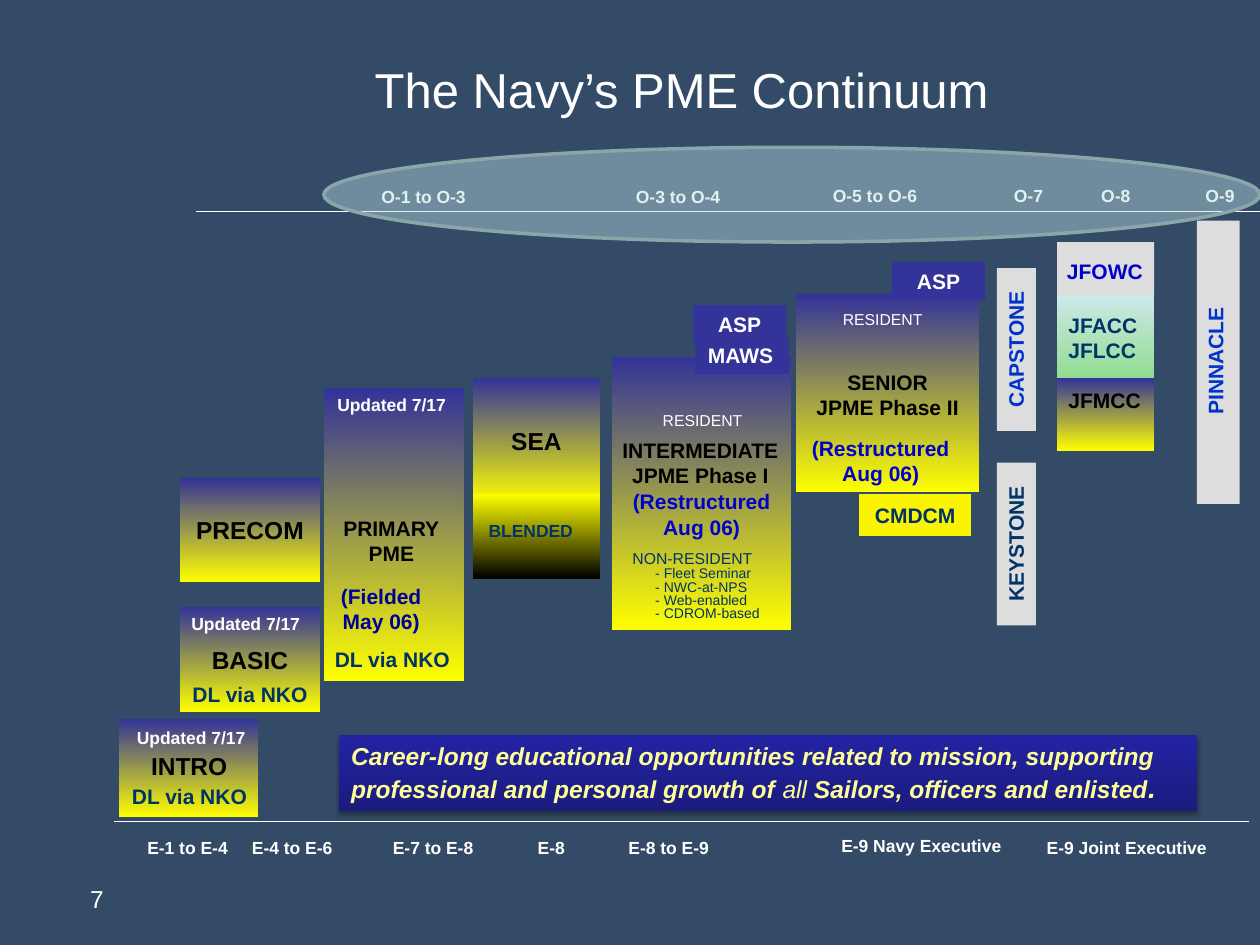
from lxml import etree
from pptx import Presentation
from pptx.dml.color import RGBColor
from pptx.enum.shapes import MSO_CONNECTOR, MSO_SHAPE
from pptx.enum.text import MSO_ANCHOR, PP_ALIGN
from pptx.oxml import parse_xml
from pptx.oxml.ns import nsdecls, qn
from pptx.util import Cm, Pt

RECT, OVAL, BUTTON = MSO_SHAPE.RECTANGLE, MSO_SHAPE.OVAL, MSO_SHAPE.ACTION_BUTTON_CUSTOM
TOP, MIDDLE = MSO_ANCHOR.TOP, MSO_ANCHOR.MIDDLE
LEFT, CENTER, RIGHT = PP_ALIGN.LEFT, PP_ALIGN.CENTER, PP_ALIGN.RIGHT

WHITE = RGBColor(0xFF, 0xFF, 0xFF)
BLACK = RGBColor(0, 0, 0)
SLATE = RGBColor(0x33, 0x4B, 0x67)
INDIGO = RGBColor(0x33, 0x33, 0x99)
YELLOW = RGBColor(0xFF, 0xFF, 0)
GOLD = RGBColor(0xFA, 0xF4, 0)
TEAL = RGBColor(0, 0x33, 0x66)
BLUE = RGBColor(0, 0, 0xCC)
NAVY = RGBColor(0, 0, 0x99)
ROYAL = RGBColor(0, 0x33, 0xCC)
GREY = RGBColor(0xDD, 0xDD, 0xDD)
ICE = RGBColor(0xCF, 0xE9, 0xEB)
GREEN = RGBColor(0x92, 0xDC, 0x92)
BANNER_LOW = RGBColor(0x1B, 0x1B, 0x7E)
BANNER_HIGH = RGBColor(0x23, 0x23, 0xA3)
CREAM = RGBColor(0xFF, 0xFF, 0x99)
HALO = RGBColor(0xBB, 0xE0, 0xE3)
HALO_LINE = RGBColor(0x8A, 0xA6, 0xA8)

RANK = {"size": 10, "bold": True, "color": WHITE}
HEAD = {"size": 14, "bold": True, "color": BLACK}
NAME = {"size": 12, "bold": True, "color": BLACK}
MODE = {"size": 9, "color": WHITE}
FADE = (INDIGO, YELLOW)


def cm(*inches):
    return [Cm(round(2.54 * v, 2)) for v in inches]


def add_run(p, text, fmt):
    r = p.add_run()
    r.text = text
    r.font.name = "Arial"
    for key, value in fmt.items():
        if key == "color":
            r.font.color.rgb = value
        else:
            setattr(r.font, key, Pt(value) if key == "size" else value)


def write(sp, lines, fmt, align=CENTER, anchor=TOP, spacing=None):
    """Fill a shape; each line is a string or a list of (text, extra format)."""
    tf = sp.text_frame
    tf.word_wrap = True
    tf.vertical_anchor = anchor
    if align == LEFT:
        tf.margin_right = 0
    for i, line in enumerate(lines):
        p = tf.paragraphs[0] if i == 0 else tf.add_paragraph()
        p.alignment = align
        if spacing:
            p.line_spacing = spacing
        for text, extra in [(line, {})] if isinstance(line, str) else line:
            add_run(p, text, {**fmt, **extra})
    return tf


def add_text(s, box, lines, fmt, align=LEFT, **options):
    sp = s.shapes.add_textbox(*cm(*box))
    write(sp, lines, fmt, align, **options)
    return sp


def add_block(s, box, fill, kind=RECT, angle=270):
    """Borderless shape; a pair of colours makes a gradient."""
    sp = s.shapes.add_shape(kind, *cm(*box))
    sp.shadow.inherit = False
    sp.line.fill.background()
    if isinstance(fill, RGBColor):
        sp.fill.solid()
        sp.fill.fore_color.rgb = fill
    else:
        sp.fill.gradient()
        sp.fill.gradient_angle = angle
        for stop, color in zip(sp.fill.gradient_stops, fill):
            stop.color.rgb = color
    return sp


def add_rule(s, x1, x2, y):
    ln = s.shapes.add_connector(MSO_CONNECTOR.STRAIGHT, *cm(x1, y, x2, y))
    ln.line.color.rgb = WHITE
    ln.line.width = Pt(0.75)
    etree.SubElement(ln._element.spPr, qn("a:effectLst"))


def add_banner(s):
    sp = add_block(s, (2.69, 5.83, 6.81, 0.61), (BANNER_LOW, BANNER_HIGH), angle=90)
    effects = sp._element.spPr.find(qn("a:effectLst"))
    effects.append(parse_xml(
        f'<a:outerShdw {nsdecls("a")} blurRad="39370" dist="22860" dir="5400000" rotWithShape="0">'
        '<a:srgbClr val="000000"><a:alpha val="35000"/></a:srgbClr></a:outerShdw>'))
    write(sp, ["Career-long educational opportunities related to mission, supporting",
               [("professional and personal growth of ", {}), ("all", {"bold": False}),
                (" Sailors, officers and enlisted", {}), (".", {"size": 16})]],
          {"size": 14, "bold": True, "italic": True, "color": CREAM}, LEFT)


def add_halo(s):
    sp = add_block(s, (2.57, 1.17, 7.43, 0.75), HALO, OVAL)
    color = sp._element.spPr.find(qn("a:solidFill"))[0]
    etree.SubElement(color, qn("a:alpha"), val="44000")
    sp.line.color.rgb = HALO_LINE
    sp.line.width = Pt(2)


def main():
    prs = Presentation()
    prs.slide_width, prs.slide_height = cm(10, 7.5)
    s = prs.slides.add_slide(prs.slide_layouts[6])
    s.background.fill.solid()
    s.background.fill.fore_color.rgb = SLATE

    # Title and slide number
    add_text(s, (1.45, 0.42, 7.92, 0.57), ["The Navy’s PME Continuum"],
             {"size": 28, "color": WHITE}, CENTER)
    tf = add_text(s, (0.17, 6.92, 0.75, 0.52), ["7"], {"size": 14, "color": WHITE},
                  RIGHT).text_frame
    tf.margin_top = tf.margin_bottom = Cm(0.25)

    # Officer and enlisted rank scales
    add_rule(s, 1.56, 10, 1.68)
    add_rule(s, 0.9, 9.91, 6.52)
    for x, y, w, text in (
            (2.93, 1.43, 0.9, "O-1 to O-3"), (4.95, 1.43, 0.9, "O-3 to O-4"),
            (6.51, 1.42, 0.9, "O-5 to O-6"), (7.95, 1.42, 0.43, "O-7"),
            (8.64, 1.42, 0.43, "O-8"), (9.47, 1.42, 0.44, "O-9"),
            (1.07, 6.59, 0.86, "E-1 to E-4"), (1.9, 6.59, 0.86, "E-4 to E-6"),
            (3.02, 6.59, 0.86, "E-7 to E-8"), (4.17, 6.59, 0.43, "E-8"),
            (4.89, 6.59, 0.86, "E-8 to E-9"), (6.58, 6.58, 1.5, "E-9 Navy Executive"),
            (8.21, 6.59, 1.5, "E-9 Joint Executive")):
        add_text(s, (x, y, w, 0.27), [text], RANK)

    # Course blocks
    for box, fill, title in (
            ((0.94, 5.71, 1.11, 0.78), FADE, None), ((1.43, 4.82, 1.11, 0.83), FADE, "BASIC"),
            ((1.43, 3.79, 1.11, 0.83), FADE, "PRECOM"), ((2.57, 3.08, 1.11, 2.33), FADE, None),
            ((3.75, 3, 1.01, 1), FADE, "SEA"), ((3.75, 3.92, 1.01, 0.67), (YELLOW, BLACK), None),
            ((4.86, 2.83, 1.42, 2.17), FADE, None), ((6.32, 2.33, 1.45, 1.58), FADE, None),
            ((8.39, 3, 0.77, 0.58), FADE, None), ((8.39, 2.33, 0.77, 0.67), (ICE, GREEN), None),
            ((8.39, 1.92, 0.77, 0.42), GREY, None), ((9.5, 1.75, 0.34, 2.25), GREY, None)):
        sp = add_block(s, box, fill)
        if title:
            write(sp, [title], HEAD, anchor=MIDDLE)
    add_text(s, (1.03, 5.83, 0.94, 0.5), ["INTRO"], HEAD, CENTER, anchor=MIDDLE)

    # Course names
    restructured = ["(Restructured", "Aug 06)"]
    for box, lines, color in (
            ((2.57, 4.04, 1.07, 0.5), ["PRIMARY", "PME"], BLACK),
            ((2.57, 4.58, 0.91, 0.5), ["(Fielded", "May 06)"], NAVY),
            ((4.82, 3.42, 1.48, 0.5), ["INTERMEDIATE", "JPME Phase I"], BLACK),
            ((4.91, 3.83, 1.32, 0.5), restructured, BLUE),
            ((6.33, 2.88, 1.43, 0.51), ["SENIOR", "JPME Phase II"], BLACK),
            ((6.33, 3.41, 1.32, 0.5), restructured, BLUE)):
        add_text(s, box, lines, {**NAME, "color": color}, CENTER)

    # Delivery notes
    for x, y in ((0.95, 6.17), (1.43, 5.36), (2.56, 5.08)):
        add_text(s, (x, y, 1.14, 0.3), ["DL via NKO"], {**NAME, "color": TEAL})
    for x, y in ((0.99, 5.72), (1.42, 4.82), (2.58, 3.08)):
        add_text(s, (x, y, 1.1, 0.27), ["Updated 7/17"], RANK)
    for x, y in ((5.16, 3.21), (6.59, 2.41)):
        add_text(s, (x, y, 0.85, 0.25), ["RESIDENT"], MODE)
    add_text(s, (3.78, 4.08, 0.9, 0.27), ["BLENDED"], {**RANK, "color": TEAL})
    small = {"size": 8}
    options = ["- Fleet Seminar", "- NWC-at-NPS", "- Web-enabled", "- CDROM-based"]
    sp = add_text(s, (4.92, 4.34, 1.31, 0.67),
                  ["NON-RESIDENT"] + [[(text, small)] for text in options],
                  {**MODE, "color": TEAL}, spacing=0.8)
    for p in sp.text_frame.paragraphs[1:]:
        p._p.get_or_add_pPr().set("marL", str(Cm(0.46)))

    # Joint commander courses
    sp = add_text(s, (8.38, 2.43, 0.79, 0.91),
                  ["JFACC", "JFLCC", [("JFMCC", {"color": BLACK})]], {**NAME, "color": TEAL})
    sp.text_frame.paragraphs[2].space_before = Pt(14)
    add_text(s, (8.37, 2, 0.82, 0.3), ["JFOWC"], {**NAME, "color": BLUE})

    # Upright labels
    for y, text, color in ((2.62, "CAPSTONE", ROYAL), (4.16, "KEYSTONE", TEAL)):
        sp = add_block(s, (7.42, y, 1.29, 0.31), GREY)
        sp.rotation = 270
        write(sp, [text], {**NAME, "color": color})
    sp = add_text(s, (9.14, 2.73, 1.06, 0.26), ["PINNACLE"], {**NAME, "color": ROYAL},
                  spacing=0.75)
    sp.rotation = 270

    # Tags on the blocks
    for x, y, text in ((5.52, 2.67, "MAWS"), (5.5, 2.42, "ASP"), (7.08, 2.08, "ASP")):
        sp = add_block(s, (x, y, 0.74, 0.3), INDIGO)
        write(sp, [text], {**NAME, "color": WHITE}, LEFT if text == "MAWS" else CENTER)
    sp = add_block(s, (6.82, 3.92, 0.89, 0.33), GOLD, BUTTON)
    write(sp, ["CMDCM"], {**NAME, "color": TEAL}, anchor=MIDDLE)

    add_banner(s)
    add_halo(s)
    prs.save("out.pptx")


if __name__ == "__main__":
    main()
